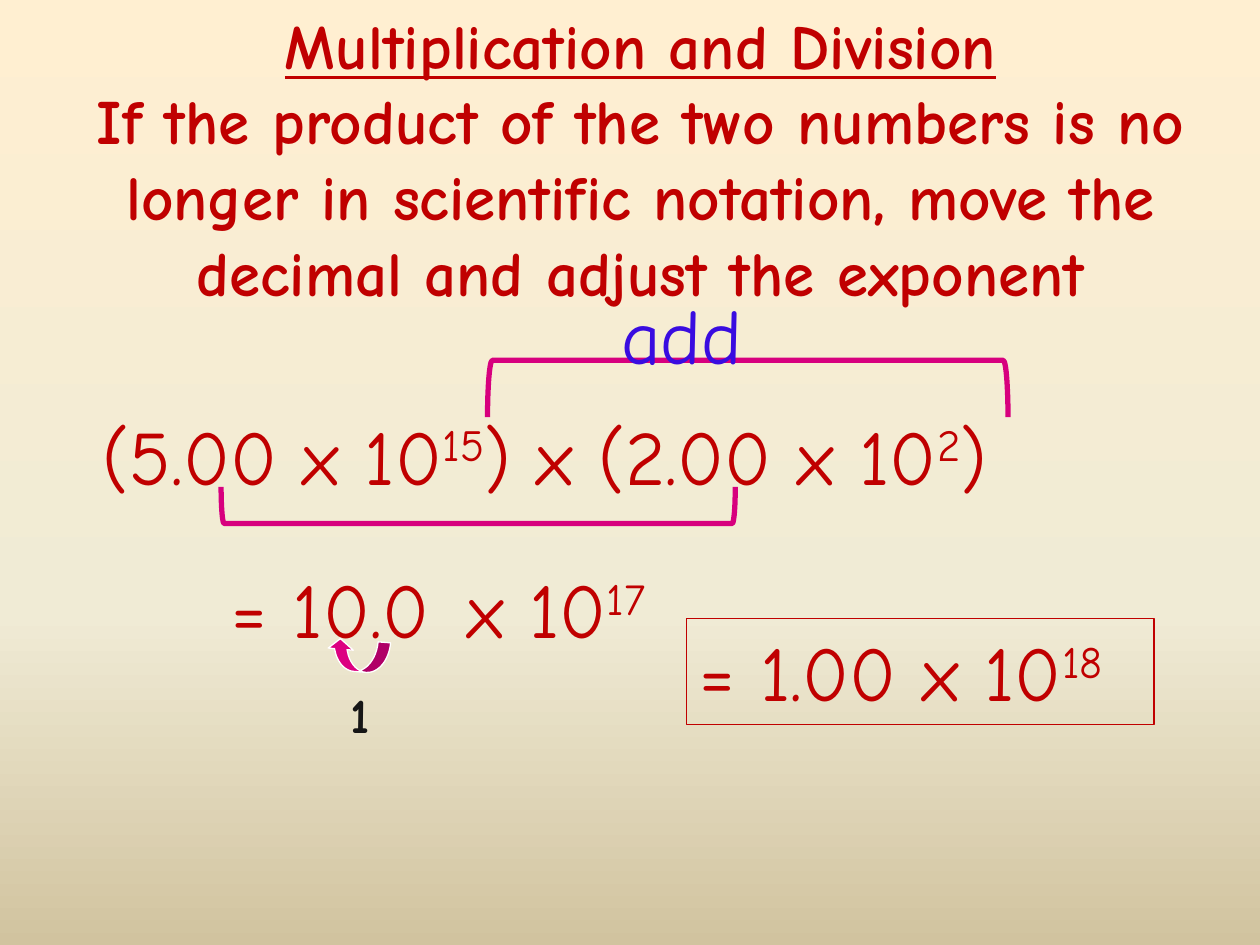
"""Build a slide on multiplying numbers in scientific notation."""
from copy import deepcopy

from pptx import Presentation
from pptx.dml.color import RGBColor
from pptx.enum import shapes, text
from pptx.util import Pt

RED = RGBColor(0xC0, 0x00, 0x00)
BLUE = RGBColor(0x39, 0x0C, 0xE0)
BLACK = RGBColor(0x16, 0x16, 0x16)
MAGENTA = RGBColor(0xD7, 0x00, 0x7E)
PINK = RGBColor(0xDC, 0x00, 0x81)
WHITE = RGBColor(0xFF, 0xFF, 0xFF)
CREAM = RGBColor(0xFF, 0xEF, 0xD1)
IVORY = RGBColor(0xF0, 0xEB, 0xD5)
SAND = RGBColor(0xD1, 0xC3, 0x9F)


def add_run(paragraph, words, size, color, **formats):
    run = paragraph.add_run()
    run.text = words
    run.font.color.rgb = color
    values = {"name": "Comic Neue", "size": Pt(size), **formats}
    for name, value in values.items():
        setattr(run.font, name, value)
    return run


def add_box(left, top, width, height):
    box = slide.shapes.add_textbox(Pt(left), Pt(top), Pt(width), Pt(height))
    box.text_frame.word_wrap = True
    return box


presentation = Presentation()
presentation.slide_width, presentation.slide_height = Pt(720), Pt(540)
slide = presentation.slides.add_slide(presentation.slide_layouts[6])

background = slide.background.fill
background.gradient()
background.gradient_angle = 270
stop_list = background._fill._gradFill.gsLst
stop_list.append(deepcopy(stop_list[-1]))
stops = [(0, CREAM), (0.65, IVORY), (1, SAND)]
for stop, (position, color) in zip(background.gradient_stops, stops):
    stop.position = position
    stop.color.rgb = color

title = add_box(0, 90, 732, 90)
title.text_frame.vertical_anchor = text.MSO_ANCHOR.BOTTOM
paragraph = title.text_frame.paragraphs[0]
paragraph.alignment = text.PP_ALIGN.CENTER
add_run(paragraph, "Multiplication and Division", 36, RED, bold=True, underline=True)
paragraph.add_line_break()
add_run(
    paragraph,
    "If the product of the two numbers is no longer in scientific notation, "
    "move the decimal and adjust the exponent",
    36, RED, bold=True,
)

brackets = [(262.8, 141.8, 20.9, 293.8, 270), (411.1, 73.4, 32.4, 297.4, 90)]
for left, top, width, height, rotation in brackets:
    bracket = slide.shapes.add_shape(
        shapes.MSO_SHAPE.LEFT_BRACKET, Pt(left), Pt(top), Pt(width), Pt(height)
    )
    bracket.rotation = rotation
    bracket.shadow.inherit = False
    bracket.fill.background()
    bracket.line.color.rgb = MAGENTA
    bracket.line.width = Pt(3)

# Odd-numbered pieces of each expression are exponents.
expressions = [
    (51.8, 229.7, 566.6, RED, ["(5.00 x 10", "15", ") x (2.00 x 10", "2", ")"]),
    (125.3, 317.5, 136.1, RED, ["= 10.0"]),
    (347.8, 160.6, 89.3, BLUE, ["add"]),
    (259.9, 317.5, 132.5, RED, ["x 10", "17"]),
    (392.4, 353.5, 267.1, RED, ["= 1.00 x 10", "18"]),
]
for left, top, width, color, pieces in expressions:
    box = add_box(left, top, width, 60.5)
    for index, piece in enumerate(pieces):
        run = add_run(box.text_frame.paragraphs[0], piece, 44, color)
        if index % 2:
            run.font._element.set("baseline", "30000")
box.line.color.rgb = RED
box.line.width = Pt(0.75)

arrow = slide.shapes.add_shape(
    shapes.MSO_SHAPE.CURVED_DOWN_ARROW, Pt(186.5), Pt(365.8), Pt(36), Pt(18)
)
arrow.rotation = 184.8
arrow.shadow.inherit = False
for index, value in enumerate([0.4, 0.8, 0.33]):
    arrow.adjustments[index] = value
arrow.fill.solid()
arrow.fill.fore_color.rgb = PINK
arrow.line.color.rgb = WHITE
arrow.line.width = Pt(0.75)

places_moved = add_box(193, 387.4, 30.2, 41)
add_run(places_moved.text_frame.paragraphs[0], "1", 28, BLACK, bold=True)

presentation.save("out.pptx")
